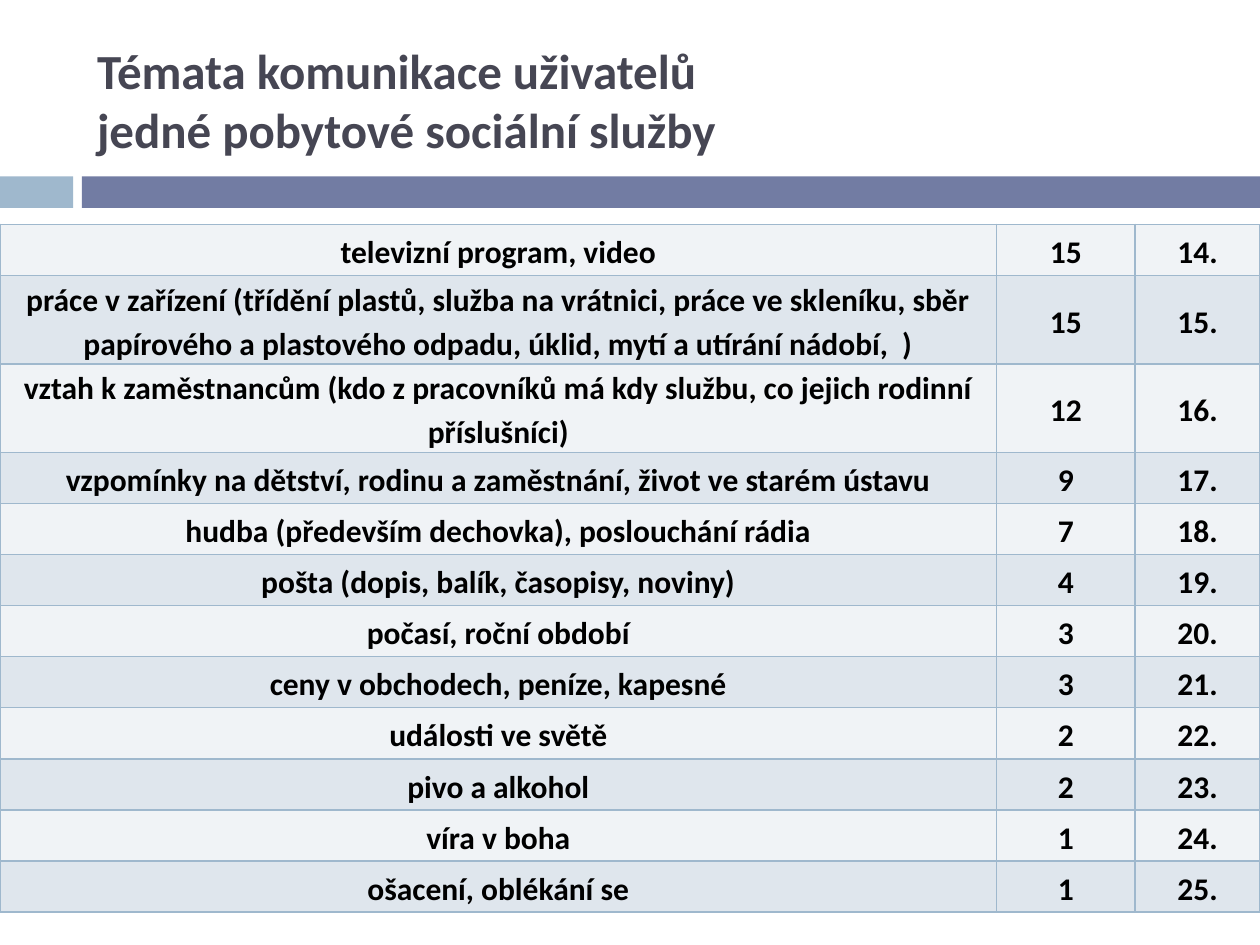
from dataclasses import dataclass

from lxml import etree
from pptx import Presentation
from pptx.dml.color import RGBColor
from pptx.enum.shapes import MSO_SHAPE
from pptx.enum.text import MSO_ANCHOR, PP_ALIGN
from pptx.oxml.ns import qn
from pptx.util import Inches, Pt


@dataclass(frozen=True)
class Theme:
    font: str = "Calibri"
    title_size: int = 28
    cell_size: int = 18
    title: str = "464653"
    text: str = "000000"
    accent: str = "9FB8CD"
    bar: str = "727CA3"
    bands: tuple = ("F0F3F6", "DFE6ED")


theme = Theme()


def add_styled_run(paragraph, text, size, color):
    run = paragraph.add_run()
    run.text = text
    run.font.name = theme.font
    run.font.size = Pt(size)
    run.font.bold = True
    run.font.color.rgb = RGBColor.from_string(color)


def add_borders(cell, color, width):
    properties = cell._tc.get_or_add_tcPr()
    for position, side in enumerate(("a:lnL", "a:lnR", "a:lnT", "a:lnB")):
        line = etree.Element(qn(side), w=str(Pt(width)))
        fill = etree.SubElement(line, qn("a:solidFill"))
        etree.SubElement(fill, qn("a:srgbClr"), val=color)
        properties.insert(position, line)


presentation = Presentation()
presentation.slide_width = Inches(10)
presentation.slide_height = Inches(7.5)
slide = presentation.slides.add_slide(presentation.slide_layouts[5])

# Divider bars
for left, width, color in ((0, 0.58, theme.accent), (0.65, 9.35, theme.bar)):
    divider = slide.shapes.add_shape(
        MSO_SHAPE.RECTANGLE, Inches(left), Inches(1.4), Inches(width), Inches(0.25))
    divider.shadow.inherit = False
    divider.fill.solid()
    divider.fill.fore_color.rgb = RGBColor.from_string(color)
    divider.line.fill.background()

# Title
title = slide.shapes.title
title.left, title.top = Inches(0.67), Inches(0.25)
title.width, title.height = Inches(8.92), Inches(1.08)
title.text_frame.word_wrap = True
title.text_frame.vertical_anchor = MSO_ANCHOR.MIDDLE
heading = title.text_frame.paragraphs[0]
heading.alignment = PP_ALIGN.LEFT
add_styled_run(heading, "Témata komunikace uživatelů", theme.title_size, theme.title)
heading.add_line_break()
add_styled_run(heading, "jedné pobytové sociální služby", theme.title_size, theme.title)

# Topics with their counts; ranks run on from the first one
first_rank = 14
topics = [
    ("televizní program, video", 15),
    ("práce v zařízení (třídění plastů, služba na vrátnici, práce ve skleníku, "
     "sběr papírového a plastového odpadu, úklid, mytí a utírání nádobí,  )", 15),
    ("vztah k zaměstnancům (kdo z pracovníků má kdy službu, "
     "co jejich rodinní příslušníci)", 12),
    ("vzpomínky na dětství, rodinu a zaměstnání, život ve starém ústavu", 9),
    ("hudba (především dechovka), poslouchání rádia", 7),
    ("pošta (dopis, balík, časopisy, noviny)", 4),
    ("počasí, roční období", 3),
    ("ceny v obchodech, peníze, kapesné", 3),
    ("události ve světě", 2),
    ("pivo a alkohol", 2),
    ("víra v boha", 1),
    ("ošacení, oblékání se", 1),
]

# Table
column_widths = (7.91, 1.1, 0.99)
topic_table = slide.shapes.add_table(
    len(topics), len(column_widths),
    Inches(0), Inches(1.78), Inches(10), Inches(4.87)).table
topic_table.first_row = False
topic_table.horz_banding = False
for column, width in zip(topic_table.columns, column_widths):
    column.width = Inches(width)

for index, (topic, count) in enumerate(topics):
    band = theme.bands[index % 2]
    values = (topic, str(count), f"{first_rank + index}.")
    for cell, value in zip(topic_table.rows[index].cells, values):
        cell.fill.solid()
        cell.fill.fore_color.rgb = RGBColor.from_string(band)
        cell.vertical_anchor = MSO_ANCHOR.MIDDLE
        cell.margin_left = cell.margin_right = Inches(0.07)
        cell.margin_top = cell.margin_bottom = Inches(0)
        add_borders(cell, theme.accent, 1)
        entry = cell.text_frame.paragraphs[0]
        entry.alignment = PP_ALIGN.CENTER
        entry.line_spacing = 1.15
        entry.space_after = Pt(10)
        add_styled_run(entry, value, theme.cell_size, theme.text)

presentation.save("out.pptx")
